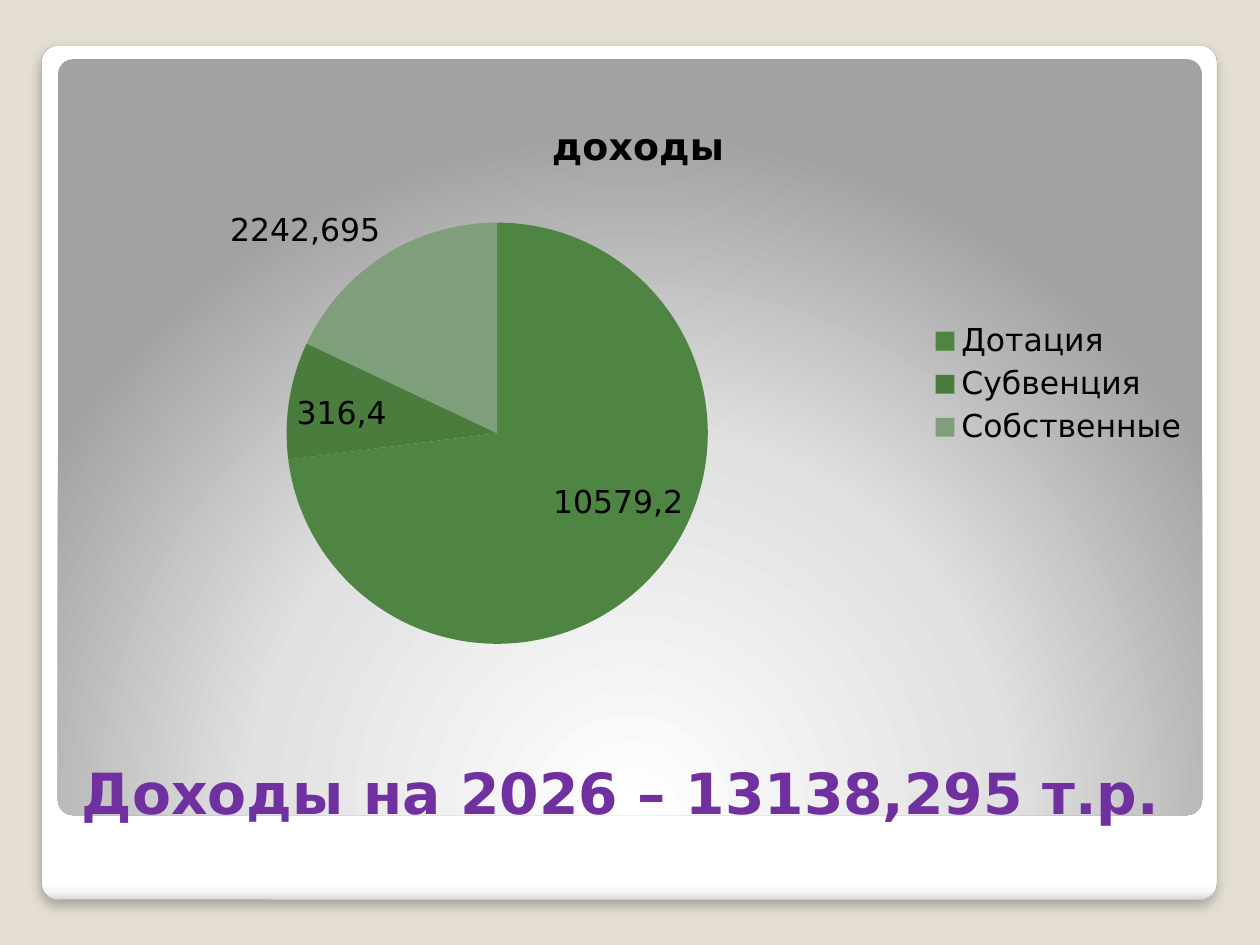
import dataclasses

import lxml.etree
import pptx
import pptx.chart.data
import pptx.dml.color
import pptx.enum.chart
import pptx.enum.shapes
import pptx.enum.text
import pptx.oxml
import pptx.oxml.ns
import pptx.util

Inches = pptx.util.Inches
Pt = pptx.util.Pt
qn = pptx.oxml.ns.qn
Position = pptx.enum.chart.XL_LABEL_POSITION


@dataclasses.dataclass(frozen=True)
class Theme:
    font: str = "DejaVu Sans"
    background: str = "E3DED1"
    outline: str = "A4A4A4"
    text: str = "000000"
    title: str = "7030A0"
    title_size: float = 32.4
    chart_title_size: float = 21.6
    chart_size: float = 18
    frame_stops: tuple = ((0, "FFFFFF"), (98, "FFFFFF"), (99, "F7F7F7"), (100, "DADADA"))
    panel_stops: tuple = ((0, "FFFFFF"), (55, "E1E1E1"), (100, "A2A2A2"))


THEME = Theme()
LINEAR = '<a:lin ang="5400000" scaled="0"/>'
RADIAL = ('<a:path path="circle">'
          '<a:fillToRect l="50000" t="175000" r="50000" b="-75000"/></a:path>')

# Category, label, colour, label position, label shift as fractions of the chart
INCOME = (
    ("Дотация", "10579,2", "4E8542", Position.INSIDE_END, (0.03, -0.08)),
    ("Субвенция", "316,4", "4A7C3D", Position.INSIDE_END, (0, -0.01)),
    ("Собственные", "2242,695", "7E9F7A", Position.OUTSIDE_END, None),
)
# The last value has no category
SHARES = (73, 9, 18, 0)


def rgb(value):
    return pptx.dml.color.RGBColor.from_string(value)


def style_font(font, size, color, bold=False):
    font.name = THEME.font
    font.size = Pt(size)
    font.bold = bold
    font.color.rgb = rgb(color)


def drawing_xml(tag, content):
    namespace = pptx.oxml.ns.nsdecls("a")
    return pptx.oxml.parse_xml(f"<a:{tag} {namespace}>{content}</a:{tag}>")


def add_rounded_panel(slide, box, stops, direction):
    shape = slide.shapes.add_shape(
        pptx.enum.shapes.MSO_SHAPE.ROUNDED_RECTANGLE, *box)
    shape.adjustments[0] = 0.02
    shape.shadow.inherit = False
    shape.line.fill.background()
    stop_list = "".join(
        f'<a:gs pos="{place * 1000}"><a:srgbClr val="{color}"/></a:gs>'
        for place, color in stops)
    gradient = drawing_xml("gradFill", f"<a:gsLst>{stop_list}</a:gsLst>{direction}")
    shape.element.spPr.find(qn("a:prstGeom")).addnext(gradient)
    return shape


def add_frame(slide, box):
    frame = add_rounded_panel(slide, box, THEME.frame_stops, LINEAR)
    frame.line.color.rgb = rgb(THEME.outline)
    frame.line.width = Pt(0.16)
    shadow = drawing_xml("effectLst", (
        f'<a:outerShdw blurRad="{Pt(6)}" dist="{Pt(4)}" dir="5400000" '
        'algn="tl" rotWithShape="0"><a:srgbClr val="000000">'
        '<a:alpha val="25000"/></a:srgbClr></a:outerShdw>'))
    properties = frame.element.spPr
    properties.replace(properties.find(qn("a:effectLst")), shadow)


def add_title(slide, box):
    text_frame = slide.shapes.add_textbox(*box).text_frame
    text_frame.word_wrap = True
    text_frame.vertical_anchor = pptx.enum.text.MSO_ANCHOR.BOTTOM
    paragraph = text_frame.paragraphs[0]
    paragraph.text = "Доходы на 2026 – 13138,295 т.р."
    style_font(paragraph.font, THEME.title_size, THEME.title, bold=True)


def set_manual_layout(parent, index, **settings):
    """Place a chart part by fractions of the chart box."""
    layout = parent.find(qn("c:layout"))
    if layout is None:
        layout = lxml.etree.Element(qn("c:layout"))
        parent.insert(index, layout)
    manual = lxml.etree.SubElement(layout, qn("c:manualLayout"))
    for name, value in settings.items():
        lxml.etree.SubElement(manual, qn(f"c:{name}")).set("val", str(value))


def hide_legend_entry(legend, index):
    entry = pptx.oxml.parse_xml(
        f'<c:legendEntry {pptx.oxml.ns.nsdecls("c")}>'
        f'<c:idx val="{index}"/><c:delete val="1"/></c:legendEntry>')
    legend._element.find(qn("c:legendPos")).addnext(entry)


def add_income_chart(slide, box):
    data = pptx.chart.data.CategoryChartData()
    data.categories = [row[0] for row in INCOME]
    data.add_series("Series 1", SHARES)
    chart = slide.shapes.add_chart(
        pptx.enum.chart.XL_CHART_TYPE.PIE, *box, data).chart
    style_font(chart.font, THEME.chart_size, THEME.text)
    plot = chart.plots[0]
    plot.vary_by_categories = True
    set_manual_layout(plot._element.getparent(), 0, layoutTarget="inner",
                      xMode="edge", yMode="edge", x=0.18, y=0.22, w=0.39, h=0.73)

    # Chart title and legend
    chart.has_title = True
    paragraph = chart.chart_title.text_frame.paragraphs[0]
    paragraph.text = "доходы"
    style_font(paragraph.font, THEME.chart_title_size, THEME.text, bold=True)
    chart.has_legend = True
    chart.legend.position = pptx.enum.chart.XL_LEGEND_POSITION.RIGHT
    chart.legend.include_in_layout = False
    style_font(chart.legend.font, THEME.chart_size, THEME.text)
    hide_legend_entry(chart.legend, len(INCOME))

    # Slices and their labels
    series = plot.series[0]
    for index, (_, label, color, position, shift) in enumerate(INCOME):
        point = series.points[index]
        point.format.fill.solid()
        point.format.fill.fore_color.rgb = rgb(color)
        point.format.line.fill.background()
        paragraph = point.data_label.text_frame.paragraphs[0]
        paragraph.text = label
        style_font(paragraph.runs[0].font, THEME.chart_size, THEME.text)
        point.data_label.position = position
        if shift:
            label_element = series._element.findall(".//" + qn("c:dLbl"))[index]
            set_manual_layout(label_element, 1, x=shift[0], y=shift[1])


def build_income_slide(presentation):
    slide = presentation.slides.add_slide(presentation.slide_layouts[6])
    slide.background.fill.solid()
    slide.background.fill.fore_color.rgb = rgb(THEME.background)
    add_frame(slide, (Inches(0.33), Inches(0.36), Inches(9.33), Inches(6.78)))
    add_rounded_panel(
        slide, (Inches(0.46), Inches(0.47), Inches(9.08), Inches(6)),
        THEME.panel_stops, RADIAL)
    add_title(slide, (Inches(0.55), Inches(5.45), Inches(8.95), Inches(1.15)))
    add_income_chart(slide, (Inches(0.59), Inches(0.76), Inches(8.95), Inches(4.58)))


def main():
    presentation = pptx.Presentation()
    presentation.slide_width = Inches(10)
    presentation.slide_height = Inches(7.5)
    build_income_slide(presentation)
    presentation.save("out.pptx")


if __name__ == "__main__":
    main()
